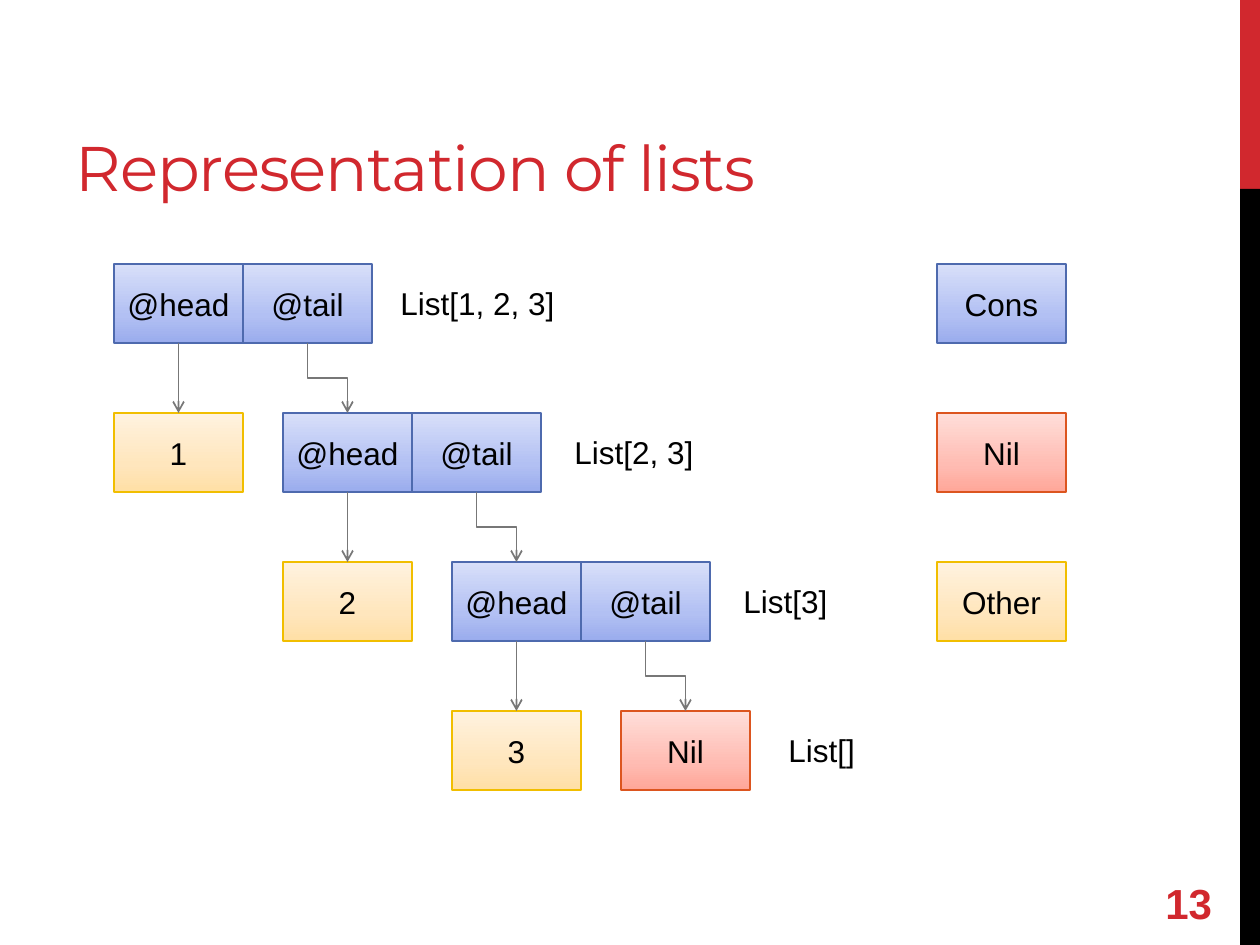
from dataclasses import dataclass

from pptx import Presentation
from pptx.dml.color import RGBColor
from pptx.enum.shapes import MSO_CONNECTOR, MSO_SHAPE
from pptx.enum.text import MSO_ANCHOR, MSO_AUTO_SIZE, PP_ALIGN
from pptx.oxml import parse_xml
from pptx.oxml.ns import nsdecls, qn
from pptx.util import Pt

RECT = MSO_SHAPE.RECTANGLE
STRAIGHT, ELBOW = MSO_CONNECTOR.STRAIGHT, MSO_CONNECTOR.ELBOW
LEFT, CENTER = PP_ALIGN.LEFT, PP_ALIGN.CENTER
TOP, MIDDLE, BOTTOM = MSO_ANCHOR.TOP, MSO_ANCHOR.MIDDLE, MSO_ANCHOR.BOTTOM
NO_FIT = MSO_AUTO_SIZE.NONE

TITLE = "Representation of lists"
PAGE = "13"
CELLS = ["1", "2", "3"]
LABELS = [("List[1, 2, 3]", 388), ("List[2, 3]", 562), ("List[3]", 731), ("List[]", 776)]
LEGEND = [("Cons", "cons"), ("Nil", "nil"), ("Other", "other")]


@dataclass(frozen=True)
class Theme:
    red: str = "D1282E"
    black: str = "000000"
    arrow: str = "777777"
    title_font: str = "Montserrat"
    font: str = "Arial"
    title_size: int = 36
    text_size: int = 18
    page_size: int = 24


THEME = Theme()
KINDS = {
    "cons": ("4E6AAE", ("9AACED", "B2C0F3", "D8DFF9")),
    "nil": ("DC551F", ("FFA698", "FFBCB3", "FFDED9")),
    "other": ("F1BE00", ("FFDFA5", "FFE6BD", "FFF2DF")),
}
GRADIENT_STOPS = (0, 35, 100)

SLIDE_W, SLIDE_H = 1260, 945
BOX_W, BOX_H = 129, 79
CHAIN_X, CHAIN_Y = 114, 264
STEP_X, STEP_Y = 169, 149
LEGEND_X = 937
BAR_X, BAR_SPLIT = 1240, 189


def px(n):
    return round(n * 914400 / 126)


def rgb(code):
    return RGBColor.from_string(code)


def write(shape, text, size=THEME.text_size, color=THEME.black, font=THEME.font,
          bold=False, align=LEFT, anchor=TOP, wrap=True):
    frame = shape.text_frame
    frame.word_wrap = wrap
    frame.auto_size = NO_FIT
    frame.vertical_anchor = anchor
    paragraph = frame.paragraphs[0]
    paragraph.alignment = align
    run = paragraph.add_run()
    run.text = text
    run.font.size, run.font.name, run.font.bold = Pt(size), font, bold
    run.font.color.rgb = rgb(color)
    return run


def add_rect(slide, x, y, w, h):
    rect = slide.shapes.add_shape(RECT, px(x), px(y), px(w), px(h))
    rect.shadow.inherit = False
    return rect


def add_bar(slide, y, h, color):
    bar = add_rect(slide, BAR_X, y, SLIDE_W - BAR_X, h)
    bar.fill.solid()
    bar.fill.fore_color.rgb = rgb(color)
    bar.line.fill.background()


def add_cell(slide, text, kind, x, y):
    cell = add_rect(slide, x, y, BOX_W, BOX_H)
    outline, shades = KINDS[kind]
    stops = "".join(
        f'<a:gs pos="{stop * 1000}"><a:srgbClr val="{shade}"/></a:gs>'
        for stop, shade in zip(GRADIENT_STOPS, shades))
    gradient = parse_xml(
        f'<a:gradFill {nsdecls("a")} rotWithShape="1"><a:gsLst>{stops}</a:gsLst>'
        '<a:lin ang="16200000" scaled="0"/></a:gradFill>')
    cell._element.spPr.find(qn("a:prstGeom")).addnext(gradient)
    cell.line.color.rgb = rgb(outline)
    cell.line.width = Pt(1)
    write(cell, text, align=CENTER, anchor=MIDDLE, wrap=False)
    return cell


def add_arrow(slide, source, target, kind):
    arrow = slide.shapes.add_connector(kind, 0, 0, 0, 0)
    arrow.begin_connect(source, 2)
    arrow.end_connect(target, 0)
    arrow.line.color.rgb = rgb(THEME.arrow)
    arrow.line.width = Pt(1)
    properties = arrow._element.spPr
    properties.find(qn("a:ln")).append(
        parse_xml(f'<a:tailEnd {nsdecls("a")} type="arrow"/>'))
    properties.append(parse_xml(f'<a:effectLst {nsdecls("a")}/>'))
    if kind == ELBOW:
        across, down = arrow.width, arrow.height
        arrow.left += (across - down) // 2
        arrow.top += (down - across) // 2
        arrow.width, arrow.height = down, across
        frame = properties.find(qn("a:xfrm"))
        frame.set("rot", "16200000")
        frame.set("flipH", "1")


def add_label(slide, text, x, y, w, h, **style):
    box = slide.shapes.add_textbox(px(x), px(y), px(w), px(h))
    write(box, text, **style)


def add_chain(slide):
    previous_tail = None
    for i, value in enumerate(CELLS):
        x, y = CHAIN_X + i * STEP_X, CHAIN_Y + i * STEP_Y
        head = add_cell(slide, "@head", "cons", x, y)
        tail = add_cell(slide, "@tail", "cons", x + BOX_W, y)
        content = add_cell(slide, value, "other", x, y + STEP_Y)
        add_arrow(slide, head, content, STRAIGHT)
        if previous_tail:
            add_arrow(slide, previous_tail, head, ELBOW)
        previous_tail = tail
    n = len(CELLS)
    end = add_cell(slide, "Nil", "nil", CHAIN_X + n * STEP_X, CHAIN_Y + n * STEP_Y)
    add_arrow(slide, previous_tail, end, ELBOW)


def main():
    deck = Presentation()
    deck.slide_width, deck.slide_height = px(SLIDE_W), px(SLIDE_H)
    slide = deck.slides.add_slide(deck.slide_layouts[5])

    add_bar(slide, 0, BAR_SPLIT, THEME.red)
    add_bar(slide, BAR_SPLIT, SLIDE_H - BAR_SPLIT, THEME.black)

    title = slide.shapes.title
    title.left, title.top, title.width, title.height = px(63), px(21), px(798), px(189)
    heading = write(title, TITLE, THEME.title_size, THEME.red, THEME.title_font,
                    anchor=BOTTOM)
    heading._r.get_or_add_rPr().set("spc", "-60")

    add_chain(slide)
    for i, (text, x) in enumerate(LABELS):
        add_label(slide, text, x, CHAIN_Y + 14 + i * STEP_Y, 182, 50, wrap=False)
    for i, (text, kind) in enumerate(LEGEND):
        add_cell(slide, text, kind, LEGEND_X, CHAIN_Y + i * STEP_Y)
    add_label(slide, PAGE, 1153, 878, 80, 50, size=THEME.page_size,
              color=THEME.red, bold=True, anchor=MIDDLE)
    deck.save("out.pptx")


if __name__ == "__main__":
    main()
